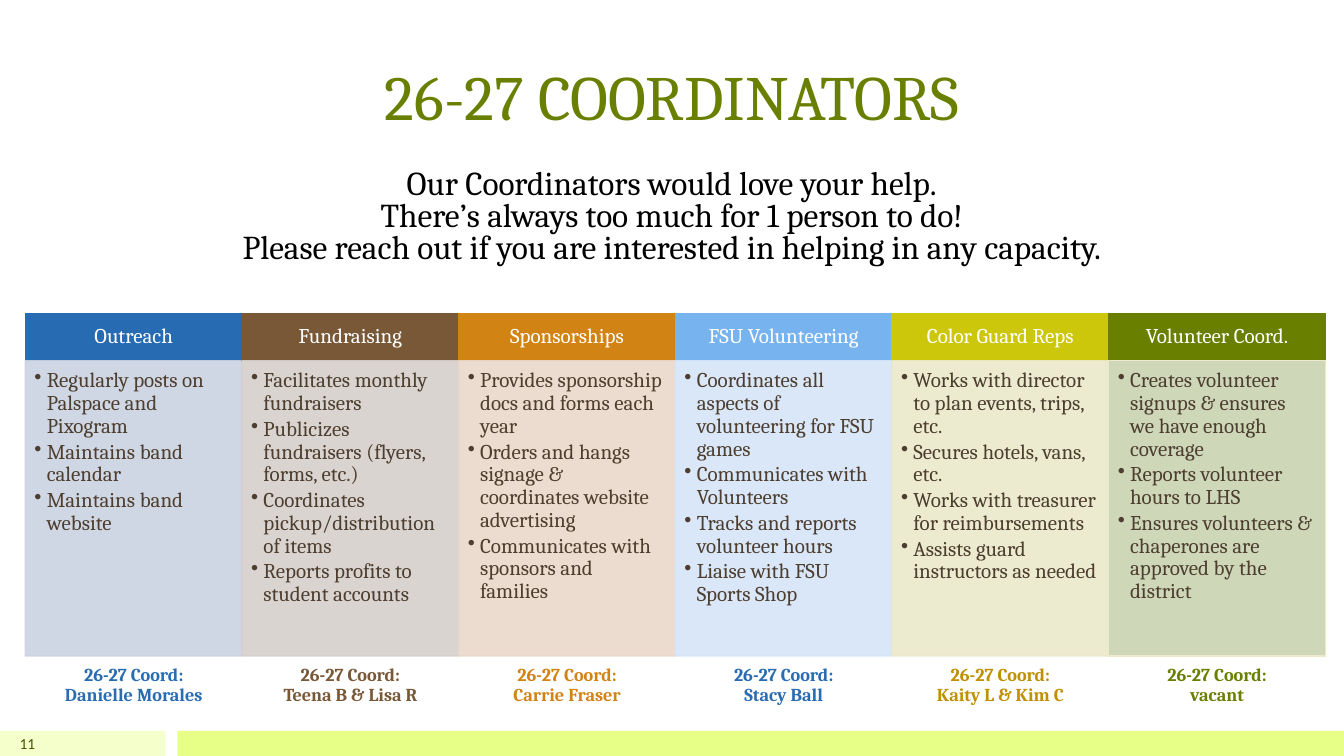
"""Build the 26-27 coordinators slide with one column for each role."""
import lxml.etree
import pptx
import pptx.dml.color
import pptx.enum.shapes
import pptx.enum.text
import pptx.oxml.ns
import pptx.util

Cm, Pt = pptx.util.Cm, pptx.util.Pt
qn = pptx.oxml.ns.qn
PP_ALIGN = pptx.enum.text.PP_ALIGN
ANCHOR = pptx.enum.text.MSO_ANCHOR
RECT = pptx.enum.shapes.MSO_SHAPE.RECTANGLE

prs = pptx.Presentation()
prs.slide_width, prs.slide_height = Cm(33.87), Cm(19.05)
slide = prs.slides.add_slide(prs.slide_layouts[6])


def paint(fill, color):
    fill.solid()
    fill.fore_color.rgb = pptx.dml.color.RGBColor.from_string(color)


def add_text(text, box, fill=None, line=None, alpha=100, size=15, color="FFFFFF",
             font="Cambria", bold=False, align=PP_ALIGN.CENTER, anchor=ANCHOR.MIDDLE,
             spacing=0.9, before=0, bullet=None, insets=(0.3, 0.18, 0.3, 0.18)):
    box = [Cm(v) for v in box]
    if fill:
        sp = slide.shapes.add_shape(RECT, *box)
        sp.shadow.inherit = False
        paint(sp.fill, fill)
        if line:
            paint(sp.line.fill, line)
            sp.line.width = Pt(1)
        else:
            sp.line.fill.background()
        if alpha < 100:
            for clr in sp._element.spPr.iter(qn("a:srgbClr")):
                lxml.etree.SubElement(clr, qn("a:alpha"), val=str(alpha * 1000))
    else:
        sp = slide.shapes.add_textbox(*box)
    tf = sp.text_frame
    tf.word_wrap = True
    tf.vertical_anchor = anchor
    tf.margin_left, tf.margin_top, tf.margin_right, tf.margin_bottom = [Cm(v) for v in insets]
    for i, item in enumerate(text.split("\n")):
        p = tf.paragraphs[0] if i == 0 else tf.add_paragraph()
        if bullet:
            pPr = p._p.get_or_add_pPr()
            pPr.set("marL", str(Cm(0.31)))
            pPr.set("indent", str(-Cm(0.31)))
            clr = lxml.etree.SubElement(pPr, qn("a:buClr"))
            lxml.etree.SubElement(clr, qn("a:srgbClr"), val=color)
            lxml.etree.SubElement(pPr, qn("a:buChar"), char=bullet)
        p.alignment = align
        p.line_spacing = spacing
        if i and before:
            p.space_before = Pt(before)
        r = p.add_run()
        r.text = item
        r.font.size, r.font.name, r.font.bold = Pt(size), font, bold
        paint(r.font.fill, color)
    return sp


margins = (0.25, 0.13, 0.25, 0.13)
add_text("", (0, 18.42, 4.17, 0.63), fill="F4FFCB")
add_text("", (4.47, 18.42, 29.4, 0.63), fill="E8FF87")
add_text("26-27 COORDINATORS", (3.91, 0.76, 26.04, 3.28), size=45, color="687F00",
         spacing=1.0, insets=margins)
add_text("11", (0, 18.42, 1.14, 0.63), size=11, color="455500", font="Calibri",
         align=PP_ALIGN.RIGHT, spacing=1.0, insets=margins)
add_text("Our Coordinators would love your help.\n"
         "There’s always too much for 1 person to do!\n"
         "Please reach out if you are interested in helping in any capacity.",
         (3.91, 4.06, 26.04, 2.77), size=23.8, color="000000", anchor=ANCHOR.BOTTOM,
         spacing=0.8, insets=margins)

columns = [
    ("Outreach", "276CB2", "CBD3E2", "CBD3E2", 90, "2A6CB2", "Danielle Morales",
     ["Regularly posts on Palspace and Pixogram", "Maintains band calendar",
      "Maintains band website"]),
    ("Fundraising", "795837", "D6D0CC", "D6D0CC", 90, "795837", "Teena B & Lisa R",
     ["Facilitates monthly fundraisers", "Publicizes fundraisers (flyers, forms, etc.)",
      "Coordinates pickup/distribution of items", "Reports profits to student accounts"]),
    ("Sponsorships", "D18313", "EBD8CA", "EBD8CA", 90, "D18316", "Carrie Fraser",
     ["Provides sponsorship docs and forms each year",
      "Orders and hangs signage & coordinates website advertising",
      "Communicates with sponsors and families"]),
    ("FSU Volunteering", "77B3EF", "D5E5F9", "D5E5F9", 90, "2A6CB2", "Stacy Ball",
     ["Coordinates all aspects of volunteering for FSU games",
      "Communicates with Volunteers", "Tracks and reports volunteer hours",
      "Liaise with FSU Sports Shop"]),
    ("Color Guard Reps", "CDC70C", "EBE9CA", "EBE9CA", 90, "BF9000", "Kaity L & Kim C",
     ["Works with director to plan events, trips, etc.", "Secures hotels, vans, etc.",
      "Works with treasurer for reimbursements", "Assists guard instructors as needed"]),
    ("Volunteer Coord.", "687F00", "CED8B9", "EBE9CA", 100, "687F00", "vacant",
     ["Creates volunteer signups & ensures we have enough coverage",
      "Reports volunteer hours to LHS",
      "Ensures volunteers & chaperones are approved by the district"]),
]
width = 5.46
for i, (role, head, tint, border, alpha, accent, person, duties) in enumerate(columns):
    left = 0.64 + i * width
    add_text(role, (left, 7.9, width, 1.19), fill=head, line=head)
    add_text("\n".join(duties), (left, 9.09, width, 7.44), fill=tint, line=border,
             alpha=alpha, color="4D3E2F", align=PP_ALIGN.LEFT, anchor=ANCHOR.TOP,
             before=2.2, bullet="•", insets=(0.23, 0.23, 0.3, 0.33))
    add_text(f"26-27 Coord:\n{person}", (left, 16.54, width, 1.47), size=13,
             color=accent, bold=True)

prs.save("out.pptx")
